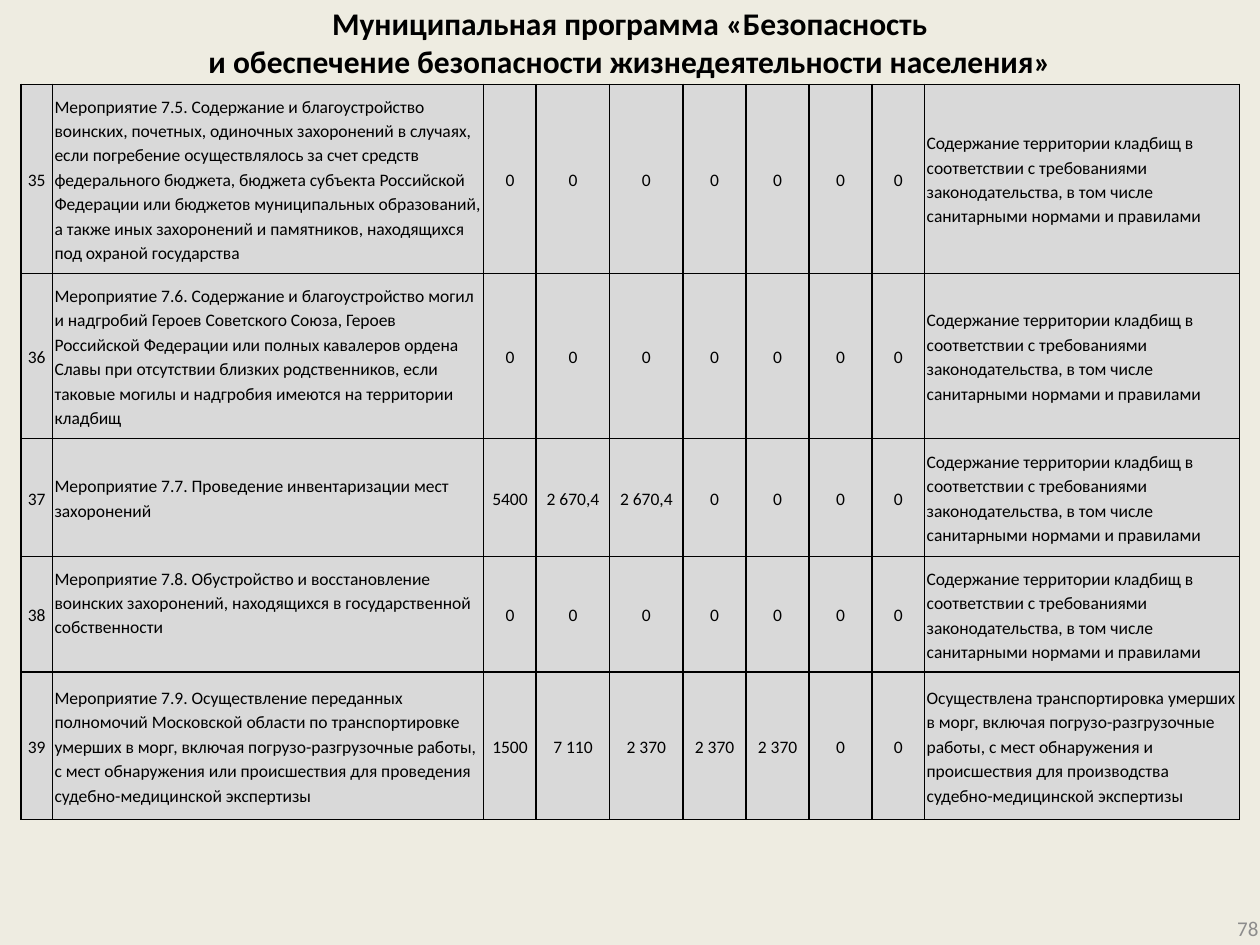
from lxml.etree import SubElement
from pptx import Presentation
from pptx.dml.color import RGBColor
from pptx.enum.text import MSO_ANCHOR as Anchor, PP_ALIGN as Align
from pptx.oxml.ns import qn
from pptx.util import Cm, Pt

COLORS = {
    "background": "EEECE1",
    "cell": "D9D9D9",
    "text": "000000",
    "border": "000000",
    "page": "8C8C8C",
}
FONT = "Calibri"
TITLE = "Муниципальная программа «Безопасность\vи обеспечение безопасности жизнедеятельности населения»"
CEMETERY_UPKEEP = (
    "Содержание территории кладбищ в соответствии с требованиями "
    "законодательства, в том числе санитарными нормами и правилами"
)
NO_FUNDS = ["0"] * 7
MEASURES = [
    ("35", "Мероприятие 7.5. Содержание и благоустройство воинских, почетных, одиночных "
     "захоронений в случаях, если погребение осуществлялось за счет средств федерального "
     "бюджета, бюджета субъекта Российской Федерации или бюджетов муниципальных образований, "
     "а также иных захоронений и памятников, находящихся под охраной государства",
     *NO_FUNDS, CEMETERY_UPKEEP),
    ("36", "Мероприятие 7.6. Содержание и благоустройство могил и надгробий Героев Советского "
     "Союза, Героев Российской Федерации или полных кавалеров ордена Славы при отсутствии "
     "близких родственников, если таковые могилы и надгробия имеются на территории кладбищ",
     *NO_FUNDS, CEMETERY_UPKEEP),
    ("37", "Мероприятие 7.7. Проведение инвентаризации мест захоронений",
     "5400", "2 670,4", "2 670,4", "0", "0", "0", "0", CEMETERY_UPKEEP),
    ("38", "Мероприятие 7.8. Обустройство и восстановление воинских захоронений, находящихся "
     "в государственной собственности",
     *NO_FUNDS, CEMETERY_UPKEEP),
    ("39", "Мероприятие 7.9. Осуществление переданных полномочий Московской области по "
     "транспортировке умерших в морг, включая погрузо-разгрузочные работы, с мест обнаружения "
     "или происшествия для проведения судебно-медицинской экспертизы",
     "1500", "7 110", "2 370", "2 370", "2 370", "0", "0",
     "Осуществлена транспортировка умерших в морг, включая погрузо-разгрузочные работы, "
     "с мест обнаружения и происшествия для производства судебно-медицинской экспертизы"),
]
COLUMN_WIDTHS = [0.64, 8.69, 1.06, 1.48, 1.48, 1.27, 1.27, 1.27, 1.06, 6.35]
ROW_HEIGHTS = [3.81, 3.33, 2.38, 2.33, 2.97]
MEASURE_COLUMN, RESULT_COLUMN = 1, 9
RAISED_CELL = (3, MEASURE_COLUMN)


def rgb(name):
    """Return the named palette colour."""
    return RGBColor.from_string(COLORS[name])


def style_text(frame, size, color, align, bold=False):
    """Format every paragraph and run of a text frame."""
    for paragraph in frame.paragraphs:
        paragraph.alignment = align
        for run in paragraph.runs:
            run.font.name = FONT
            run.font.size = Pt(size)
            run.font.bold = bold
            run.font.color.rgb = rgb(color)


def add_label(slide, box, text, size, color, align, bold=False):
    """Place a vertically centred line of text in a box."""
    frame = slide.shapes.add_textbox(*map(Cm, box)).text_frame
    frame.word_wrap = True
    frame.vertical_anchor = Anchor.MIDDLE
    frame.text = text
    style_text(frame, size, color, align, bold)


def add_borders(cell):
    """Draw a thin line on all four sides of a cell."""
    properties = cell._tc.get_or_add_tcPr()
    for side in ("lnL", "lnR", "lnT", "lnB"):
        line = SubElement(properties, qn(f"a:{side}"), w=str(Pt(1)))
        fill = SubElement(line, qn("a:solidFill"))
        SubElement(fill, qn("a:srgbClr"), val=COLORS["border"])


def fill_cell(cell, text, align, bottom):
    """Write and format one table cell."""
    add_borders(cell)
    cell.fill.solid()
    cell.fill.fore_color.rgb = rgb("cell")
    cell.vertical_anchor = Anchor.MIDDLE
    cell.margin_left = cell.margin_right = Cm(0.04)
    cell.margin_top = Cm(0.08)
    cell.margin_bottom = Cm(bottom)
    cell.text_frame.text = text
    cell.text_frame.paragraphs[0].line_spacing = 1.15
    style_text(cell.text_frame, 10, "text", align)


def add_measures(slide, left, top):
    """Build the table of measures, funding and results."""
    size = Cm(sum(COLUMN_WIDTHS)), Cm(sum(ROW_HEIGHTS))
    table = slide.shapes.add_table(
        len(MEASURES), len(COLUMN_WIDTHS), Cm(left), Cm(top), *size
    ).table
    table.first_row = table.horz_banding = False
    for column, width in zip(table.columns, COLUMN_WIDTHS):
        column.width = Cm(width)
    for row, height in zip(table.rows, ROW_HEIGHTS):
        row.height = Cm(height)
    for r, measure in enumerate(MEASURES):
        for c, text in enumerate(measure):
            align = Align.LEFT if c in (MEASURE_COLUMN, RESULT_COLUMN) else Align.CENTER
            bottom = 0.58 if (r, c) == RAISED_CELL else 0.08
            fill_cell(table.cell(r, c), text, align, bottom)


def main():
    """Assemble and save the slide."""
    deck = Presentation()
    deck.slide_width, deck.slide_height = Cm(25.4), Cm(19.05)
    slide = deck.slides.add_slide(deck.slide_layouts[6])
    slide.background.fill.solid()
    slide.background.fill.fore_color.rgb = rgb("background")
    add_label(slide, (1.27, 0, 22.86, 1.7), TITLE, 18, "text", Align.CENTER, bold=True)
    add_measures(slide, 0.42, 1.7)
    add_label(slide, (19.69, 18.2, 5.93, 1.01), "78", 12, "page", Align.RIGHT)
    deck.save("out.pptx")


if __name__ == "__main__":
    main()
